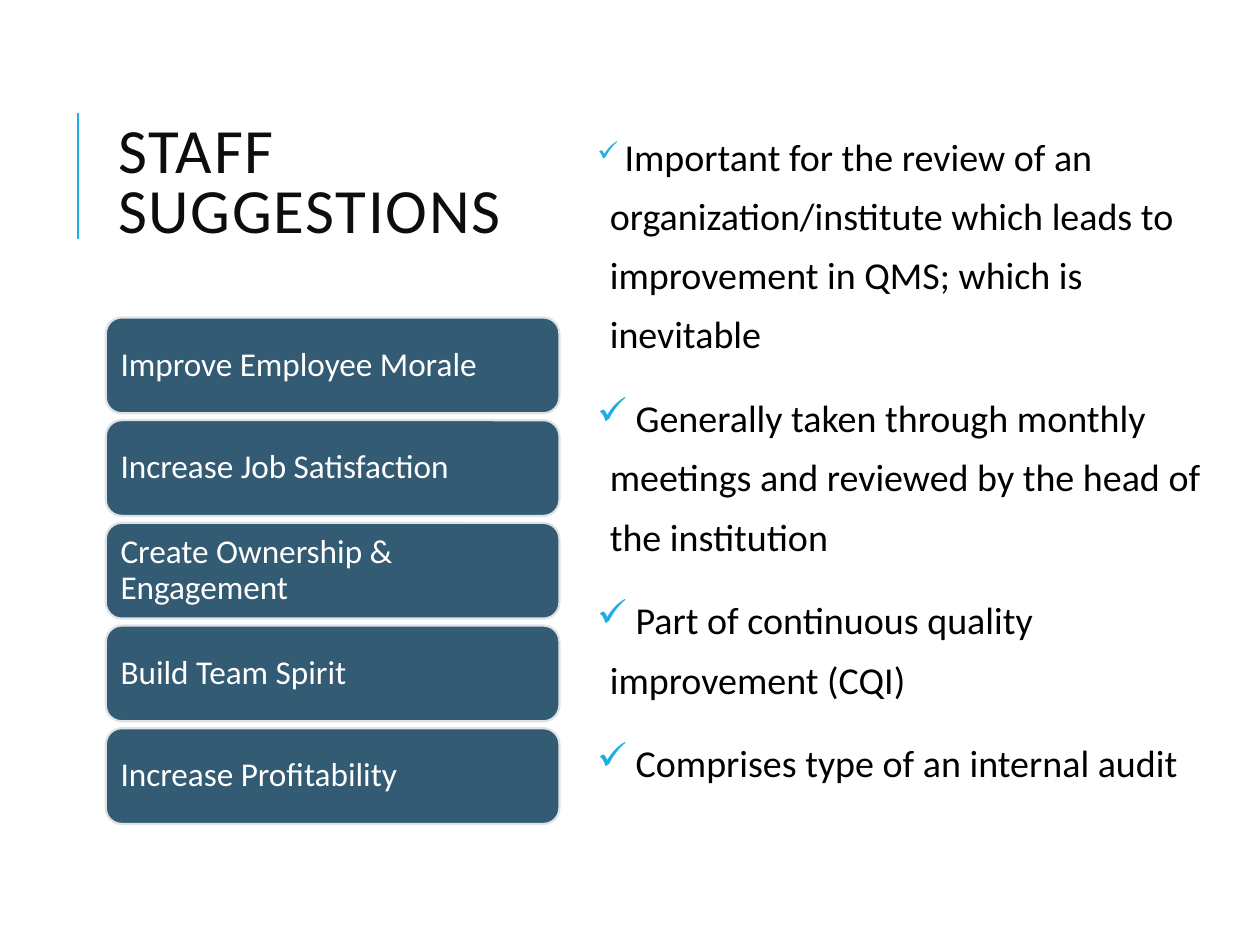
from lxml import etree
from pptx import Presentation
from pptx.dml.color import RGBColor
from pptx.enum.shapes import MSO_CONNECTOR, MSO_SHAPE
from pptx.enum.text import MSO_ANCHOR, PP_ALIGN
from pptx.oxml.ns import qn
from pptx.util import Inches, Pt

LINE = MSO_CONNECTOR.STRAIGHT
ROUND = MSO_SHAPE.ROUNDED_RECTANGLE
TOP, MIDDLE = MSO_ANCHOR.TOP, MSO_ANCHOR.MIDDLE
LEFT = PP_ALIGN.LEFT

BLUE = RGBColor(0x1C, 0xAD, 0xE4)
TEAL = RGBColor(0x33, 0x5B, 0x74)
EDGE = RGBColor(0xDF, 0xE3, 0xE5)
INK = RGBColor(0x0D, 0x0D, 0x0D)
BLACK = RGBColor(0, 0, 0)
WHITE = RGBColor(0xFF, 0xFF, 0xFF)

TITLE = "STAFF SUGGESTIONS"
GOALS = [
    "Improve Employee Morale",
    "Increase Job Satisfaction",
    "Create Ownership & Engagement",
    "Build Team Spirit",
    "Increase Profitability",
]
POINTS = [
    "Important for the review of an organization/institute which leads to "
    "improvement in QMS; which is inevitable",
    "Generally taken through monthly meetings and reviewed by the head of the institution",
    "Part of continuous quality improvement (CQI)",
    "Comprises type of an internal audit",
]


def add_check(para):
    """Give a paragraph a hanging blue check mark."""
    props = para._p.get_or_add_pPr()
    props.set("marL", str(Inches(0.1)))
    props.set("indent", str(-Inches(0.1)))
    color = etree.SubElement(props, qn("a:buClr"))
    etree.SubElement(color, qn("a:srgbClr"), val=str(BLUE))
    etree.SubElement(props, qn("a:buChar"), char="✓")


def write(shape, paras, size, color, spacing, inset, anchor=MIDDLE,
          before=0, after=0, track=0, check=False):
    """Fill a shape with paragraphs, each a list of (text, size) runs."""
    frame = shape.text_frame
    frame.word_wrap = True
    frame.vertical_anchor = anchor
    frame.margin_left = frame.margin_right = Inches(inset)
    frame.margin_top = frame.margin_bottom = Inches(inset)
    for i, runs in enumerate(paras):
        para = frame.add_paragraph() if i else frame.paragraphs[0]
        para.alignment = LEFT
        para.line_spacing = spacing
        para.space_before, para.space_after = Pt(before), Pt(after)
        if check:
            add_check(para)
        for text, own in runs:
            run = para.add_run()
            run.text = text
            run.font.name = "Calibri"
            run.font.size = Pt(own or size)
            run.font.color.rgb = color
            if track:
                run.font._element.set("spc", str(track * 100))


def add_title(slide, left, top, width, height):
    """Place the heading and the upright rule beside it."""
    x = Inches(left - 0.22)
    rule = slide.shapes.add_connector(LINE, x, Inches(1.9), x, Inches(0.9))
    rule.line.color.rgb = BLUE
    rule.line.width = Pt(1.5)
    etree.SubElement(rule._element.spPr, qn("a:effectLst"))
    box = slide.shapes.add_textbox(
        Inches(left), Inches(top), Inches(width), Inches(height))
    write(box, [[(TITLE, None)]], 36, INK, 0.8, 0.1, track=1)


def add_points(slide, left, top, width, height):
    """Place the checked list; its first mark is smaller."""
    box = slide.shapes.add_textbox(
        Inches(left), Inches(top), Inches(width), Inches(height))
    paras = [[(" ", None if i else 15.5), (text, None)]
             for i, text in enumerate(POINTS)]
    write(box, paras, 21.7, BLACK, 1.3, 0.05, TOP, before=12, after=2, check=True)


def add_goals(slide, left, top, width, height):
    """Stack one rounded card per goal, evenly over the box."""
    tall = 0.76
    step = (height - tall) / (len(GOALS) - 1)
    for i, goal in enumerate(GOALS):
        card = slide.shapes.add_shape(
            ROUND, Inches(left), Inches(top + i * step), Inches(width), Inches(tall))
        card.shadow.inherit = False
        card.fill.solid()
        card.fill.fore_color.rgb = TEAL
        card.line.color.rgb = EDGE
        card.line.width = Pt(1.25)
        write(card, [[(goal, None)]], 19, WHITE, 0.9, 0.08)


def main():
    """Build and save the slide."""
    deck = Presentation()
    deck.slide_width, deck.slide_height = Inches(10), Inches(7.5)
    slide = deck.slides.add_slide(deck.slide_layouts[6])
    add_title(slide, 0.84, 0.52, 3.6, 1.9)
    add_points(slide, 4.69, 0.9, 4.96, 6.18)
    add_goals(slide, 0.84, 2.52, 3.6, 4.02)
    deck.save("out.pptx")


if __name__ == "__main__":
    main()
